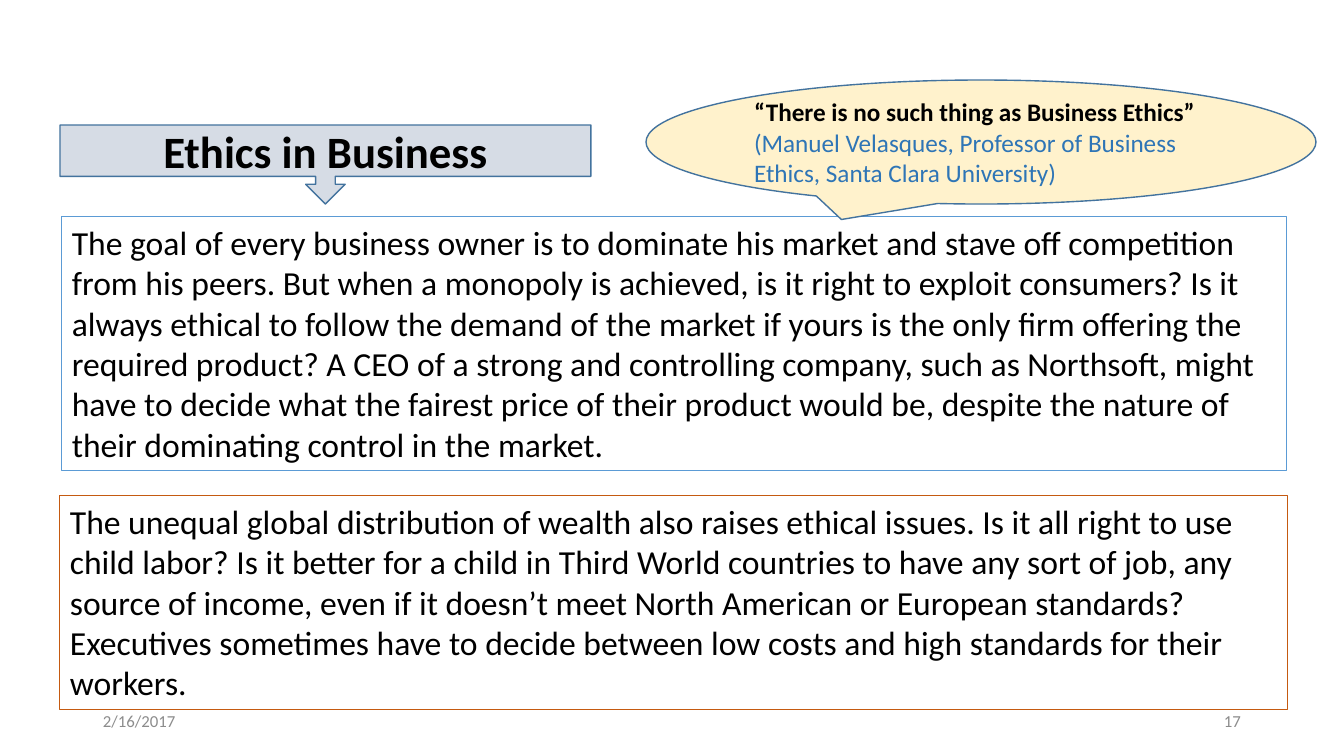
from pptx import Presentation
from pptx.dml.color import RGBColor
from pptx.enum.shapes import MSO_SHAPE as Shape
from pptx.enum.text import MSO_ANCHOR as Anchor, MSO_AUTO_SIZE as AutoSize, PP_ALIGN as Align
from pptx.util import Emu, Pt

EMU_PER_PX = 914400 / 100.8
TITLE_ONLY = 5

MONOPOLY = (
    "The goal of every business owner is to dominate his market and stave off competition "
    "from his peers. But when a monopoly is achieved, is it right to exploit consumers? Is it "
    "always ethical to follow the demand of the market if yours is the only firm offering the "
    "required product? A CEO of a strong and controlling company, such as Northsoft, might "
    "have to decide what the fairest price of their product would be, despite the nature of "
    "their dominating control in the market."
)
WEALTH = (
    "The unequal global distribution of wealth also raises ethical issues. Is it all right to use "
    "child labor? Is it better for a child in Third World countries to have any sort of job, any "
    "source of income, even if it doesn’t meet North American or European standards? "
    "Executives sometimes have to decide between low costs and high standards for their workers."
)
QUOTE = "“There is no such thing as Business Ethics” "
SPEAKER = "(Manuel Velasques, Professor of Business Ethics, Santa Clara University)"


def px(length):
    return Emu(round(length * EMU_PER_PX))


def color(value):
    return RGBColor.from_string(value)


class EthicsSlide:
    font = "Calibri"
    black = "000000"
    grey = "8C8C8C"
    outline = "43739E"

    def __init__(self, presentation):
        self.slide = presentation.slides.add_slide(presentation.slide_layouts[TITLE_ONLY])
        self.shapes = self.slide.shapes

    def add_text(self, shape, runs, size, align=Align.LEFT, anchor=Anchor.MIDDLE):
        """Fill a shape with one paragraph of (text, colour, bold) runs."""
        frame = shape.text_frame
        frame.word_wrap = True
        frame.auto_size = AutoSize.NONE
        frame.vertical_anchor = anchor
        paragraph = frame.paragraphs[0]
        paragraph.alignment = align
        for text, value, bold in runs:
            run = paragraph.add_run()
            run.text = text
            run.font.name = self.font
            run.font.size = Pt(size)
            run.font.bold = bold
            run.font.color.rgb = color(value)

    def shape(self, kind, box, line, width=1, fill=None):
        shape = self.shapes.add_shape(kind, *map(px, box))
        shape.shadow.inherit = False
        if fill:
            shape.fill.solid()
            shape.fill.fore_color.rgb = color(fill)
        else:
            shape.fill.background()
        shape.line.color.rgb = color(line)
        shape.line.width = Pt(width)
        return shape

    def title(self, text, box):
        title = self.shapes.title
        title.left, title.top, title.width, title.height = map(px, box)
        self.add_text(title, [(text, self.black, True)], 32, Align.CENTER)
        return title

    def passage(self, text, box, line):
        shape = self.shape(Shape.RECTANGLE, box, line, 0.75)
        self.add_text(shape, [(text, self.black, False)], 24, anchor=Anchor.TOP)

    def footer(self, text, left, align):
        box = self.shapes.add_textbox(px(left), px(701), px(302), px(40))
        self.add_text(box, [(text, self.grey, False)], 12, align)


def main():
    presentation = Presentation()
    presentation.slide_width, presentation.slide_height = px(1344), px(756)
    page = EthicsSlide(presentation)

    page.passage(MONOPOLY, (62, 217, 1225, 254), "5B9BD5")
    page.passage(WEALTH, (60, 496, 1228, 214), "C55A11")

    banner = page.shape(Shape.DOWN_ARROW_CALLOUT, (60, 125, 531, 79), page.outline, fill="D6DCE5")
    title = page.title("Ethics in Business", (60, 125, 531, 51))
    banner._element.addnext(title._element)  # keeps the title in front of its banner

    bubble = page.shape(Shape.OVAL_CALLOUT, (646, 80, 670, 124), page.outline, fill="FFF2CC")
    page.add_text(bubble, [(QUOTE, page.black, True), (SPEAKER, "2E75B6", False)], 18)

    page.footer("2/16/2017", 93, Align.LEFT)
    page.footer("17", 949, Align.RIGHT)
    presentation.save("out.pptx")


if __name__ == "__main__":
    main()
